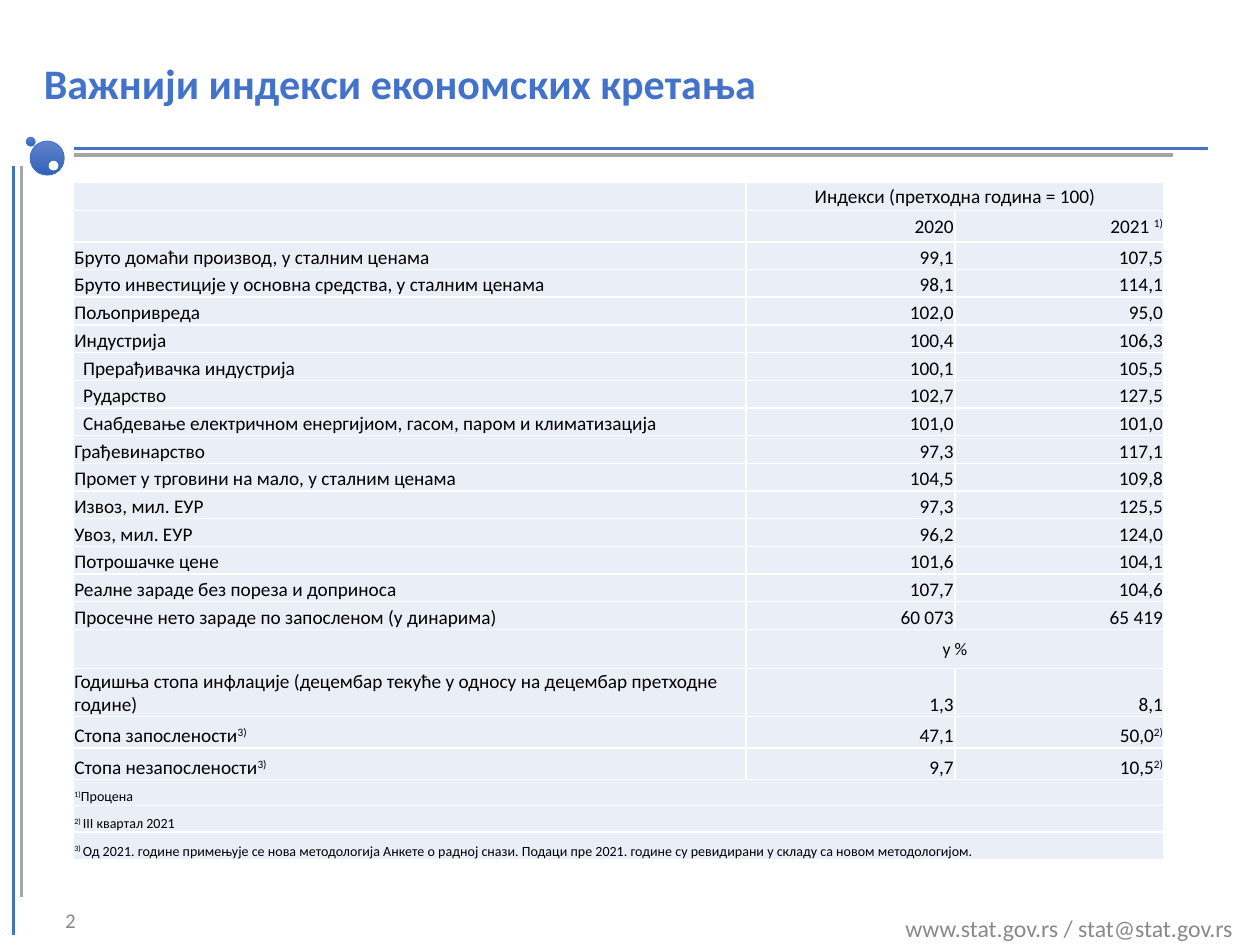
"""Build a slide with a table of the main indices of economic trends."""
from lxml.etree import SubElement
from pptx import Presentation
from pptx.dml.color import RGBColor
from pptx.enum.shapes import MSO_CONNECTOR, MSO_SHAPE
from pptx.enum.text import MSO_ANCHOR as Anchor, PP_ALIGN as Align
from pptx.oxml.ns import qn
from pptx.util import Inches, Pt

FONT = "Calibri"
COLORS = {
    "title": "4272CA", "blue": "4472C4", "gray": "A5A5A5", "footer": "898989",
    "text": "000000", "cell": "EAEFF7", "white": "FFFFFF",
    "ball_top": "6183CB", "ball_bottom": "3062BB",
}
WIDTH, HEIGHT = 10, 7.5

TITLE = "Важнији индекси економских кретања"
FOOTER = "www.stat.gov.rs / stat@stat.gov.rs"
PAGE_NUMBER = "2"

HEADERS = [
    ("", "Индекси (претходна година = 100)", None),
    ("", "2020", "2021 ^1)"),
]
INDICES = [
    ("Бруто домаћи производ, у сталним ценама", "99,1", "107,5"),
    ("Бруто инвестиције у основна средства, у сталним ценама", "98,1", "114,1"),
    ("Пољопривреда", "102,0", "95,0"),
    ("Индустрија", "100,4", "106,3"),
    ("Прерађивачка индустрија", "100,1", "105,5"),
    ("Рударство", "102,7", "127,5"),
    ("Снабдевање електричном енергијиом, гасом, паром и климатизација", "101,0", "101,0"),
    ("Грађевинарство", "97,3", "117,1"),
    ("Промет у трговини на мало, у сталним ценама", "104,5", "109,8"),
    ("Извоз, мил. ЕУР", "97,3", "125,5"),
    ("Увоз, мил. ЕУР", "96,2", "124,0"),
    ("Потрошачке цене", "101,6", "104,1"),
    ("Реалне зараде без пореза и доприноса", "107,7", "104,6"),
    ("Просечне нето зараде по запосленом (у динарима)", "60 073", "65 419"),
]
UNIT = [("", "у %", None)]
RATES = [
    ("Годишња стопа инфлације (децембар текуће у односу на децембар претходне године)", "1,3", "8,1"),
    ("Стопа запослености^3)", "47,1", "50,0^2)"),
    ("Стопа незапослености^3)", "9,7", "10,5^2)"),
]
NOTES = [
    ("^1)^Процена", None, None),
    ("^2) ^III квартал 2021", None, None),
    ("^3) ^Од 2021. године примењује се нова методологија Анкете о радној снази. Подаци пре 2021. "
     "године су ревидирани у складу са новом методологијом.", None, None),
]
SUB_ITEMS = INDICES[4:7]
SECTIONS = [
    (HEADERS, [0.22, 0.25], 11, Anchor.MIDDLE),
    (INDICES, [0.22] * len(INDICES), 11, Anchor.BOTTOM),
    (UNIT, [0.31], 10.1, Anchor.MIDDLE),
    (RATES, [0.38, 0.25, 0.25], 11, Anchor.BOTTOM),
    (NOTES, [0.21, 0.21, 0.22], 8, Anchor.BOTTOM),
]
TABLE_LEFT, TABLE_TOP = 0.58, 1.45
COLUMN_WIDTHS = [5.34, 1.66, 1.66]

RULES = [
    ((0.11, 1.32), (0.11, 7.42), "blue"),
    ((0.17, 1.32), (0.17, 7.12), "gray"),
    ((0.59, 1.18), (9.59, 1.18), "blue"),
    ((0.59, 1.23), (9.31, 1.23), "gray"),
]
BALLS = [(0.24, 1.12, 0.27, True), (0.21, 1.09, 0.07, True), (0.39, 1.28, 0.07, False)]


def rgb(name):
    return RGBColor.from_string(COLORS[name])


def style(font, size, color, bold=False):
    font.name, font.size, font.bold = FONT, Pt(size), bold
    font.color.rgb = rgb(color)


def add_text(slide, box, text, size, color, align, anchor, bold=False):
    frame = slide.shapes.add_textbox(*map(Inches, box)).text_frame
    frame.word_wrap, frame.vertical_anchor = True, anchor
    frame.text = text
    paragraph = frame.paragraphs[0]
    paragraph.alignment = align
    style(paragraph.runs[0].font, size, color, bold)


def add_rule(slide, start, end, color):
    rule = slide.shapes.add_connector(MSO_CONNECTOR.STRAIGHT, *map(Inches, start + end))
    rule.line.color.rgb, rule.line.width = rgb(color), Pt(1.75)
    SubElement(rule._element.spPr, qn("a:effectLst"))


def add_ball(slide, left, top, size, shaded):
    ball = slide.shapes.add_shape(MSO_SHAPE.OVAL, *map(Inches, (left, top, size, size)))
    ball.shadow.inherit = False
    if shaded:
        ball.fill.gradient()
        ball.fill.gradient_angle = 270
        for stop, name in zip(ball.fill.gradient_stops, ("ball_top", "ball_bottom")):
            stop.color.rgb = rgb(name)
    else:
        ball.fill.solid()
        ball.fill.fore_color.rgb = rgb("white")
    ball.line.color.rgb, ball.line.width = rgb("blue" if shaded else "white"), Pt(0.5)


def paint_cell(cell):
    properties = cell._tc.get_or_add_tcPr()
    for side in ("lnL", "lnR", "lnT", "lnB"):
        border = SubElement(properties, qn(f"a:{side}"), w=str(Pt(1)))
        SubElement(SubElement(border, qn("a:solidFill")), qn("a:srgbClr"), val=COLORS["white"])
    cell.fill.solid()
    cell.fill.fore_color.rgb = rgb("cell")


def write_cell(cell, text, size, align, anchor, indent):
    cell.margin_left = Inches(0.08 if indent else 0.01)
    cell.margin_right = cell.margin_top = Inches(0.01)
    cell.margin_bottom = 0
    cell.vertical_anchor = anchor
    paragraph = cell.text_frame.paragraphs[0]
    paragraph.alignment = align
    for index, part in enumerate(text.split("^")):
        if part:
            run = paragraph.add_run()
            run.text = part
            style(run.font, size, "text")
            if index % 2:
                run.font._element.set("baseline", "30000")
    if not text:
        SubElement(paragraph._p, qn("a:endParaRPr"), sz=str(size * 100))


def add_table(slide):
    rows = [(row, height, size, anchor) for section, heights, size, anchor in SECTIONS
            for row, height in zip(section, heights)]
    box = (TABLE_LEFT, TABLE_TOP, sum(COLUMN_WIDTHS), sum(row[1] for row in rows))
    table = slide.shapes.add_table(len(rows), len(COLUMN_WIDTHS), *map(Inches, box)).table
    table.first_row = table.horz_banding = False
    for column, width in zip(table.columns, COLUMN_WIDTHS):
        column.width = Inches(width)
    for r, (row, height, size, anchor) in enumerate(rows):
        table.rows[r].height = Inches(height)
        for c, text in enumerate(row):
            cell = table.cell(r, c)
            paint_cell(cell)
            if text is None:
                continue
            spans = c + 1 < len(row) and row[c + 1] is None
            align = Align.LEFT if c == 0 else Align.CENTER if spans else Align.RIGHT
            write_cell(cell, text, size, align, anchor, c == 0 and row in SUB_ITEMS)
            if spans:
                cell.merge(table.cell(r, len(row) - 1))


def main():
    presentation = Presentation()
    presentation.slide_width, presentation.slide_height = Inches(WIDTH), Inches(HEIGHT)
    slide = presentation.slides.add_slide(presentation.slide_layouts[6])
    add_text(slide, (6.5, 7.2, 3.38, 0.3), FOOTER, 13.6, "footer", Align.RIGHT, Anchor.TOP)
    for rule in RULES:
        add_rule(slide, *rule)
    for ball in BALLS:
        add_ball(slide, *ball)
    add_text(slide, (0.25, 0.16, 9.5, 1), TITLE, 24, "title", Align.LEFT, Anchor.MIDDLE, True)
    add_text(slide, (0.26, 7.1, 0.44, 0.4), PAGE_NUMBER, 12, "footer", Align.RIGHT, Anchor.MIDDLE)
    add_table(slide)
    presentation.save("out.pptx")


if __name__ == "__main__":
    main()
